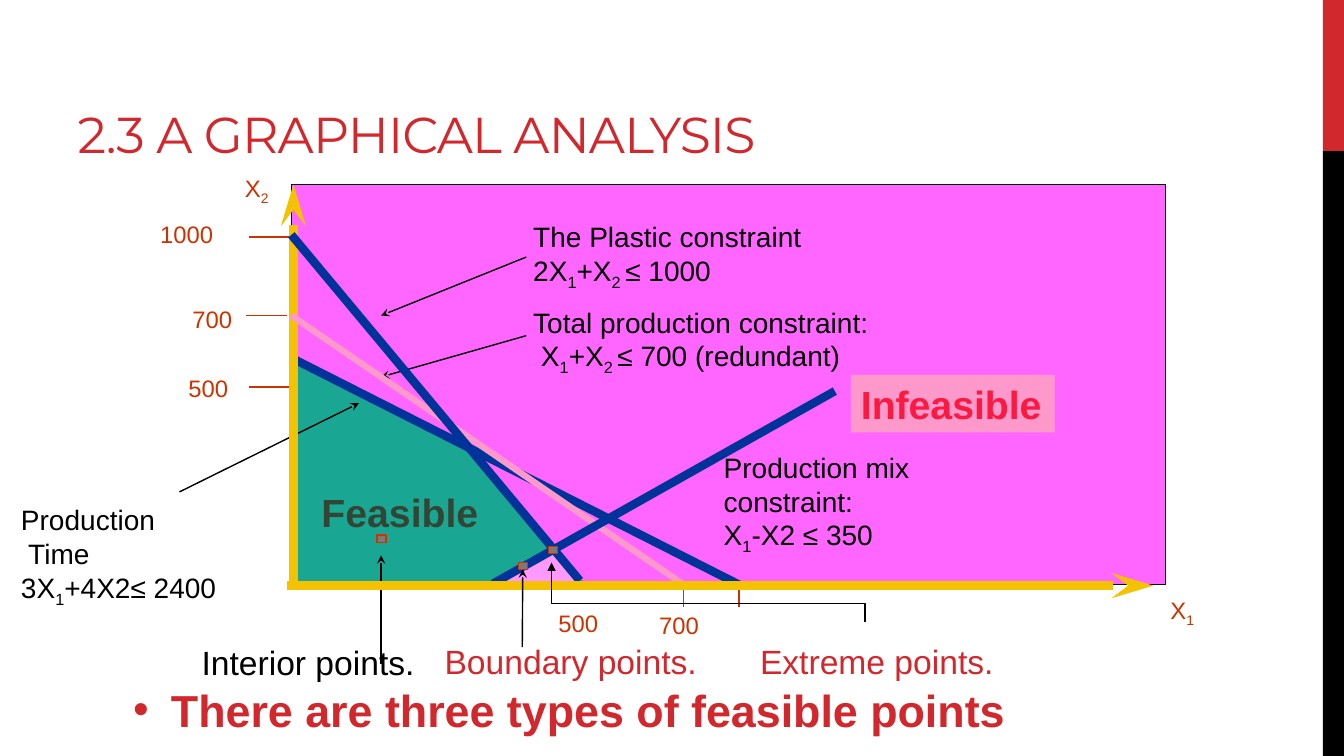
from typing import NamedTuple, Optional

from lxml import etree
from pptx import Presentation
from pptx import util as u
from pptx.dml.color import RGBColor
from pptx.enum import shapes, text
from pptx.oxml.ns import qn

RED = RGBColor(0xD1, 0x28, 0x2E)
BLACK = RGBColor(0x00, 0x00, 0x00)
MAGENTA = RGBColor(0xFF, 0x66, 0xFF)
LILAC = RGBColor(0xFF, 0x99, 0xFF)
PINK = RGBColor(0xFF, 0x99, 0xCC)
TEAL = RGBColor(0x19, 0xA7, 0x93)
DARK_GREEN = RGBColor(0x33, 0x46, 0x35)
CRIMSON = RGBColor(0xFA, 0x19, 0x41)
RUST = RGBColor(0xCC, 0x33, 0x00)
NAVY = RGBColor(0x00, 0x33, 0x99)
GOLD = RGBColor(0xF5, 0xC2, 0x01)
GREY = RGBColor(0x7A, 0x7A, 0x7A)

RECTANGLE = shapes.MSO_SHAPE.RECTANGLE


class Area(NamedTuple):
    left: float
    top: float
    width: float
    height: float
    fill: RGBColor
    line: Optional[RGBColor] = None
    kind: shapes.MSO_SHAPE = RECTANGLE


class Outline(NamedTuple):
    points: list
    fill: Optional[RGBColor] = None
    arrow: Optional[str] = None


class Stroke(NamedTuple):
    x1: float
    y1: float
    x2: float
    y2: float
    color: RGBColor = BLACK
    weight: float = 1
    arrow: Optional[str] = None
    arrow_length: str = "med"


class Note(NamedTuple):
    """A label; in each line, every second part between bars is a subscript."""
    left: float
    top: float
    width: float
    height: float
    lines: list
    size: float = 20
    color: RGBColor = BLACK
    bold: bool = False
    indent: float = 0
    fill: Optional[RGBColor] = None


def add_arrowhead(line, kind: str, length: str = "med") -> None:
    outline = line._get_or_add_ln()
    etree.SubElement(outline, qn("a:tailEnd"), type=kind, len=length)


def draw_area(page, area: Area):
    shape = page.shapes.add_shape(
        area.kind, *(u.Inches(n) for n in area[:4]))
    shape.shadow.inherit = False
    shape.fill.solid()
    shape.fill.fore_color.rgb = area.fill
    if area.line is None:
        shape.line.fill.background()
    else:
        shape.line.color.rgb = area.line
        shape.line.width = u.Pt(1)
    return shape


def draw_outline(page, outline: Outline) -> None:
    start, *rest = [(u.Inches(x), u.Inches(y)) for x, y in outline.points]
    builder = page.shapes.build_freeform(*start)
    builder.add_line_segments(rest, close=outline.fill is not None)
    shape = builder.convert_to_shape()
    shape.shadow.inherit = False
    if outline.fill is None:
        shape.fill.background()
    else:
        shape.fill.solid()
        shape.fill.fore_color.rgb = outline.fill
    shape.line.color.rgb = BLACK
    shape.line.width = u.Pt(1)
    if outline.arrow:
        add_arrowhead(shape.line, outline.arrow)


def draw_stroke(page, stroke: Stroke):
    connector = page.shapes.add_connector(
        shapes.MSO_CONNECTOR.STRAIGHT, *(u.Inches(n) for n in stroke[:4]))
    connector.line.color.rgb = stroke.color
    connector.line.width = u.Pt(stroke.weight)
    if stroke.arrow:
        add_arrowhead(connector.line, stroke.arrow, stroke.arrow_length)
    etree.SubElement(connector._element.spPr, qn("a:effectLst"))
    return connector


def format_runs(para, font: str, size: float, color: RGBColor, bold: bool) -> None:
    for span in para.runs:
        span.font.name = font
        span.font.size = u.Pt(size)
        span.font.color.rgb = color
        span.font.bold = bold


def draw_note(page, note: Note) -> None:
    box = page.shapes.add_textbox(*(u.Inches(n) for n in note[:4]))
    frame = box.text_frame
    frame.word_wrap = False
    frame.margin_left = u.Inches(0.1 + note.indent)
    if note.fill is not None:
        box.fill.solid()
        box.fill.fore_color.rgb = note.fill
    for row, line in enumerate(note.lines):
        para = frame.add_paragraph() if row else frame.paragraphs[0]
        first, *others = line.split("|")
        para.text = first
        for position, part in enumerate(others):
            span = para.add_run()
            span.text = part
            if position % 2 == 0:
                span._r.get_or_add_rPr().set("baseline", "-25000")
        format_runs(para, "Arial", note.size, note.color, note.bold)


def fill_placeholder(holder, place: tuple, words: str, font: str, size: float, bold: bool):
    holder.left, holder.top, holder.width, holder.height = (
        u.Inches(n) for n in place)
    frame = holder.text_frame
    frame.text = words
    frame.auto_size = text.MSO_AUTO_SIZE.NONE
    para = frame.paragraphs[0]
    para.alignment = text.PP_ALIGN.LEFT
    format_runs(para, font, size, RED, bold)
    return frame


SIDEBAR = [Area(13.12, 0, 0.21, 1.5, RED), Area(13.12, 1.5, 0.21, 6, BLACK)]

REGIONS = [
    Area(2.89, 1.83, 8.67, 3.97, MAGENTA, BLACK),
    Area(2.92, 2.38, 2.89, 3.42, TEAL, kind=shapes.MSO_SHAPE.RIGHT_TRIANGLE),
]
CUTOFFS = [
    Outline([(2.92, 2.38), (4.58, 4.38), (2.92, 3.55)], MAGENTA),
    Outline([(4.92, 5.77), (5.53, 5.46), (5.75, 5.79)], LILAC),
]

TICKS = [Stroke(x, y, x + 0.41, y, RUST)
         for x, y in [(2.47, 2.35), (2.44, 3.13), (2.47, 3.84)]]
TICKS += [Stroke(x, 5.79, x, 6.02, RUST) for x in (6.78, 7.33)]

CONSTRAINTS_AND_AXES = [
    Stroke(2.89, 3.55, 7.33, 5.8, NAVY, 6),
    Stroke(2.91, 5.78, 2.91, 1.83, GOLD, 6, "stealth", "lg"),
    Stroke(2.89, 3.13, 6.78, 5.8, PINK, 4.5),
    Stroke(4.89, 5.79, 8.28, 3.88, NAVY, 6),
    Stroke(2.89, 2.33, 5.75, 5.76, NAVY, 6),
    Stroke(2.85, 5.81, 11.44, 5.81, GOLD, 6, "stealth", "lg"),
]
POINTERS = [
    Stroke(1.78, 4.88, 3.56, 4, arrow="stealth"),
    Stroke(5.22, 2.55, 3.78, 3.13, arrow="stealth"),
    Stroke(5.22, 3.33, 3.78, 3.74, arrow="stealth"),
    Stroke(3.78, 6.59, 3.78, 5.51, arrow="stealth"),
]
EXTREME_POINTER = Outline(
    [(8.58, 6.17), (8.58, 5.99), (5.47, 5.99), (5.47, 5.58)], arrow="triangle")

AXIS_LABELS = [
    Note(left, top, width, 0.39, [label], 17, RUST)
    for left, top, width, label in [
        (1.49, 2.13, 0.74, "1000"), (1.81, 2.97, 0.6, "700"),
        (1.77, 3.66, 0.6, "500"), (5.44, 5.99, 0.6, "500"),
        (6.44, 6.01, 0.6, "700"), (2.33, 1.67, 0.45, "X|2"),
        (11.51, 5.86, 0.45, "X|1")]
]
NOTES = [
    Note(3.09, 4.8, 1.78, 0.57, ["Feasible"], 28, DARK_GREEN, True),
    Note(8.44, 3.72, 2.02, 0.57, ["Infeasible"], 28, CRIMSON, True, fill=PINK),
    Note(0.11, 4.94, 2.16, 1.11, ["Production\n Time", "3X|1|+4X2≤ 2400"]),
    Note(5.19, 2.13, 2.88, 0.77, ["The Plastic constraint", "2X|1|+X|2 |≤ 1000"]),
    Note(5.19, 2.98, 3.54, 0.77,
         ["Total production constraint:", " X|1|+X|2 |≤ 700 (redundant)"]),
    Note(7.08, 4.42, 2.04, 1.11, ["Production mix\nconstraint:", "X|1|-X2 ≤ 350"]),
    Note(1.4, 6.32, 2.84, 0.51, ["Interior points."], 24, indent=0.5),
    Note(3.81, 6.31, 3.24, 0.51, ["Boundary points."], 24, RED, indent=0.5),
    Note(7.44, 6.31, 2.54, 0.51, ["Extreme points."], 24, RED),
]


def main() -> None:
    deck = Presentation()
    deck.slide_width, deck.slide_height = u.Inches(13.33), u.Inches(7.5)
    page = deck.slides.add_slide(deck.slide_layouts[1])

    # Title and closing bullet
    title = fill_placeholder(page.shapes.title, (0.67, 0.17, 8.44, 1.5),
                             "2.3 A GRAPHICAL ANALYSIS", "Montserrat", 36, False)
    title.vertical_anchor = text.MSO_ANCHOR.BOTTOM
    title.paragraphs[0].runs[0]._r.get_or_add_rPr().set("spc", "-60")
    fill_placeholder(page.placeholders[1], (1.22, 6.72, 11.33, 0.58),
                     "There are three types of feasible points", "Arial", 32, True)

    # Sidebar and regions
    for area in SIDEBAR + REGIONS:
        draw_area(page, area)
    for cutoff in CUTOFFS:
        draw_outline(page, cutoff)

    # Ticks, constraints, axes and labels
    for stroke in TICKS + POINTERS + CONSTRAINTS_AND_AXES:
        draw_stroke(page, stroke)
    for note in AXIS_LABELS + NOTES:
        draw_note(page, note)

    # Feasible point markers with their pointers
    interior, boundary, extreme = (
        draw_area(page, Area(left, top, 0.09, 0.07, GREY, RUST))
        for left, top in [(3.74, 5.31), (5.14, 5.58), (5.44, 5.42)])
    pointer = draw_stroke(page, Stroke(5.18, 6.42, 5.18, 5.65, arrow="stealth"))
    pointer.end_connect(boundary, 2)
    draw_outline(page, EXTREME_POINTER)

    deck.save("out.pptx")


if __name__ == "__main__":
    main()
